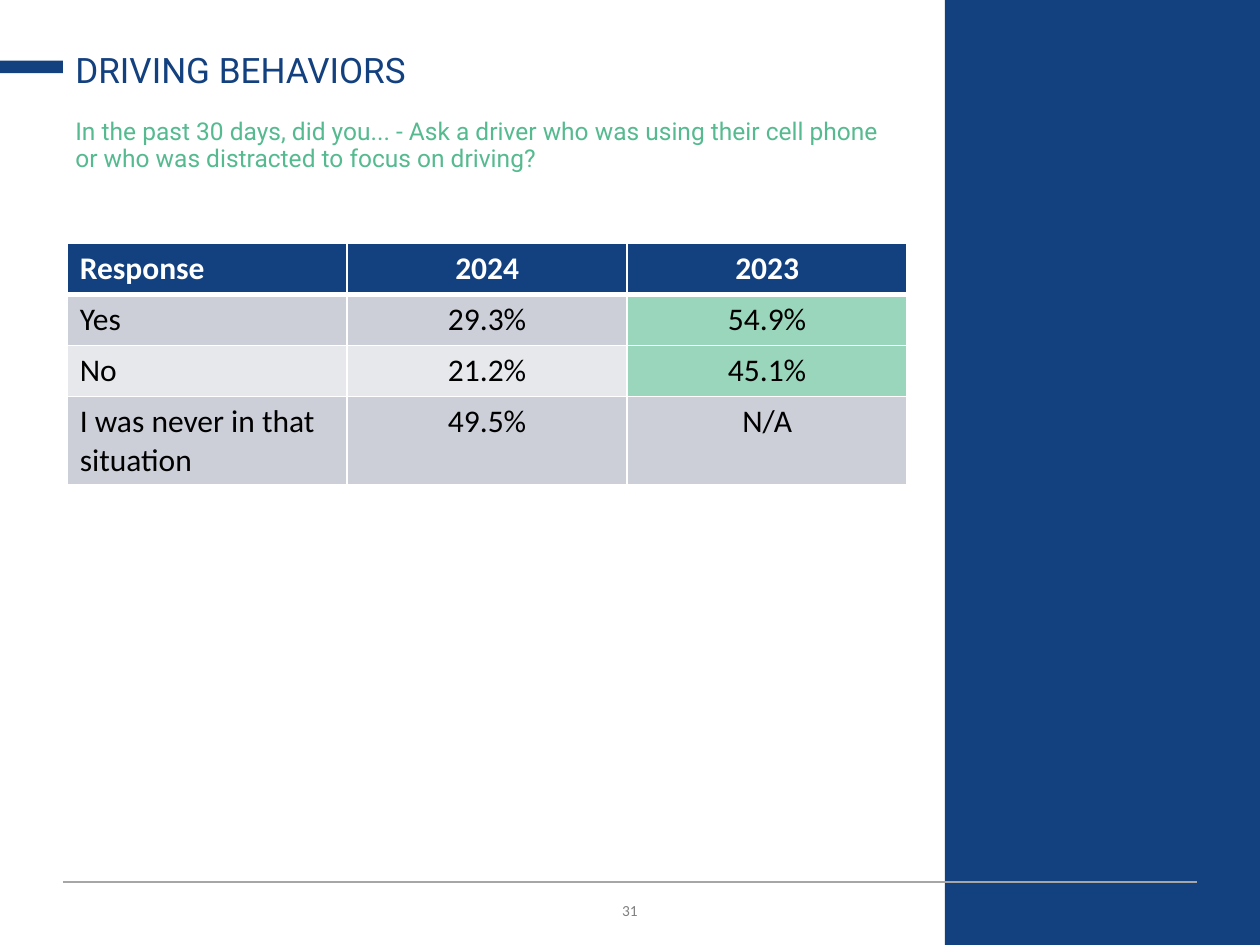
from lxml.etree import SubElement
from pptx import Presentation
from pptx.dml.color import RGBColor
from pptx.enum.shapes import MSO_CONNECTOR, MSO_SHAPE
from pptx.enum.text import MSO_ANCHOR, PP_ALIGN
from pptx.oxml.ns import qn
from pptx.util import Pt

NAVY = RGBColor(0x13, 0x40, 0x7E)
GREEN = RGBColor(0x55, 0xBA, 0x8F)
HIGHLIGHT = RGBColor(0x99, 0xD6, 0xBC)
BAND_DARK = RGBColor(0xCC, 0xCF, 0xD8)
BAND_LIGHT = RGBColor(0xE7, 0xE8, 0xEC)
RULE_GRAY = RGBColor(0xA6, 0xA6, 0xA6)
NUMBER_GRAY = RGBColor(0x80, 0x80, 0x80)
WHITE = RGBColor(0xFF, 0xFF, 0xFF)
BLACK = RGBColor(0, 0, 0)

RESPONSES = [
    ("Response", "2024", "2023"),
    ("Yes", "29.3%", "54.9%"),
    ("No", "21.2%", "45.1%"),
    ("I was never in that situation", "49.5%", "N/A"),
]
HIGHLIGHTED = {(1, 2), (2, 2)}


class SurveySlide:
    heading_font = "Roboto"
    body_font = "Calibri"

    def __init__(self, slide):
        self.shapes = slide.shapes

    def style(self, paragraph, font_name, size, color, bold=False, align=PP_ALIGN.LEFT):
        paragraph.alignment = align
        font = paragraph.font
        font.name, font.size, font.bold = font_name, Pt(size), bold
        font.color.rgb = color

    def block(self, left, top, width, height):
        rect = self.shapes.add_shape(
            MSO_SHAPE.RECTANGLE, Pt(left), Pt(top), Pt(width), Pt(height))
        rect.shadow.inherit = False
        rect.fill.solid()
        rect.fill.fore_color.rgb = NAVY
        rect.line.fill.background()

    def rule(self, left, right, y):
        line = self.shapes.add_connector(
            MSO_CONNECTOR.STRAIGHT, Pt(left), Pt(y), Pt(right), Pt(y))
        line.line.color.rgb = RULE_GRAY
        line.line.width = Pt(0.75)
        SubElement(line._element.spPr, qn("a:effectLst"))

    def text(self, words, left, top, width, height, font_name, size, color,
             anchor=MSO_ANCHOR.TOP, align=PP_ALIGN.LEFT, spacing=None):
        frame = self.shapes.add_textbox(
            Pt(left), Pt(top), Pt(width), Pt(height)).text_frame
        frame.word_wrap = True
        frame.vertical_anchor = anchor
        paragraph = frame.paragraphs[0]
        paragraph.text = words
        paragraph.line_spacing = spacing
        self.style(paragraph, font_name, size, color, align=align)
        return paragraph

    def page_number(self, number):
        paragraph = self.text(number, 36, 508.3, 648, 21.6, self.body_font, 11,
                              NUMBER_GRAY, MSO_ANCHOR.MIDDLE, PP_ALIGN.CENTER)
        paragraph.runs[0]._r.get_or_add_rPr().set("cap", "small")

    def borders(self, cell, widths):
        """Draw white cell borders; widths maps each side's tag to points."""
        properties = cell._tc.get_or_add_tcPr()
        for position, (side, width) in enumerate(widths.items()):
            border = properties.makeelement(qn(f"a:{side}"), {"w": str(Pt(width))})
            properties.insert(position, border)
            fill = SubElement(border, qn("a:solidFill"))
            SubElement(fill, qn("a:srgbClr"), val=str(WHITE))

    def table(self, rows, left, top, column_width, row_heights):
        columns = len(rows[0])
        table = self.shapes.add_table(
            len(rows), columns, Pt(left), Pt(top),
            Pt(column_width * columns), Pt(sum(row_heights))).table
        for column in table.columns:
            column.width = Pt(column_width)
        for r, values in enumerate(rows):
            table.rows[r].height = Pt(row_heights[r])
            header = r == 0
            band = NAVY if header else BAND_DARK if r % 2 else BAND_LIGHT
            for c, value in enumerate(values):
                cell = table.cell(r, c)
                cell.text = value
                cell.fill.solid()
                cell.fill.fore_color.rgb = HIGHLIGHT if (r, c) in HIGHLIGHTED else band
                self.style(cell.text_frame.paragraphs[0], self.body_font, 18,
                           WHITE if header else BLACK, header,
                           PP_ALIGN.CENTER if c else PP_ALIGN.LEFT)
                self.borders(cell, {"lnL": 1, "lnR": 1, "lnT": 3 if r == 1 else 1,
                                    "lnB": 3 if header else 1})


def main():
    deck = Presentation()
    deck.slide_width, deck.slide_height = Pt(720), Pt(540)
    page = SurveySlide(deck.slides.add_slide(deck.slide_layouts[6]))

    page.page_number("31")
    page.block(540, 0, 180, 540)
    page.rule(36, 684, 504)
    page.block(0, 34.6, 36, 7.2)
    page.text("In the past 30 days, did you... - Ask a driver who was using their "
              "cell phone or who was distracted to focus on driving?",
              36, 64.8, 482.4, 48.2, page.heading_font, 14, GREEN, spacing=0.9)
    page.text("DRIVING BEHAVIORS", 36, 20.9, 482.4, 34.6, page.heading_font, 20,
              NAVY, MSO_ANCHOR.BOTTOM, spacing=0.9)
    page.table(RESPONSES, 38.4, 139, 160, [29.2, 29.2, 29.2, 50.4])
    deck.save("out.pptx")


if __name__ == "__main__":
    main()
